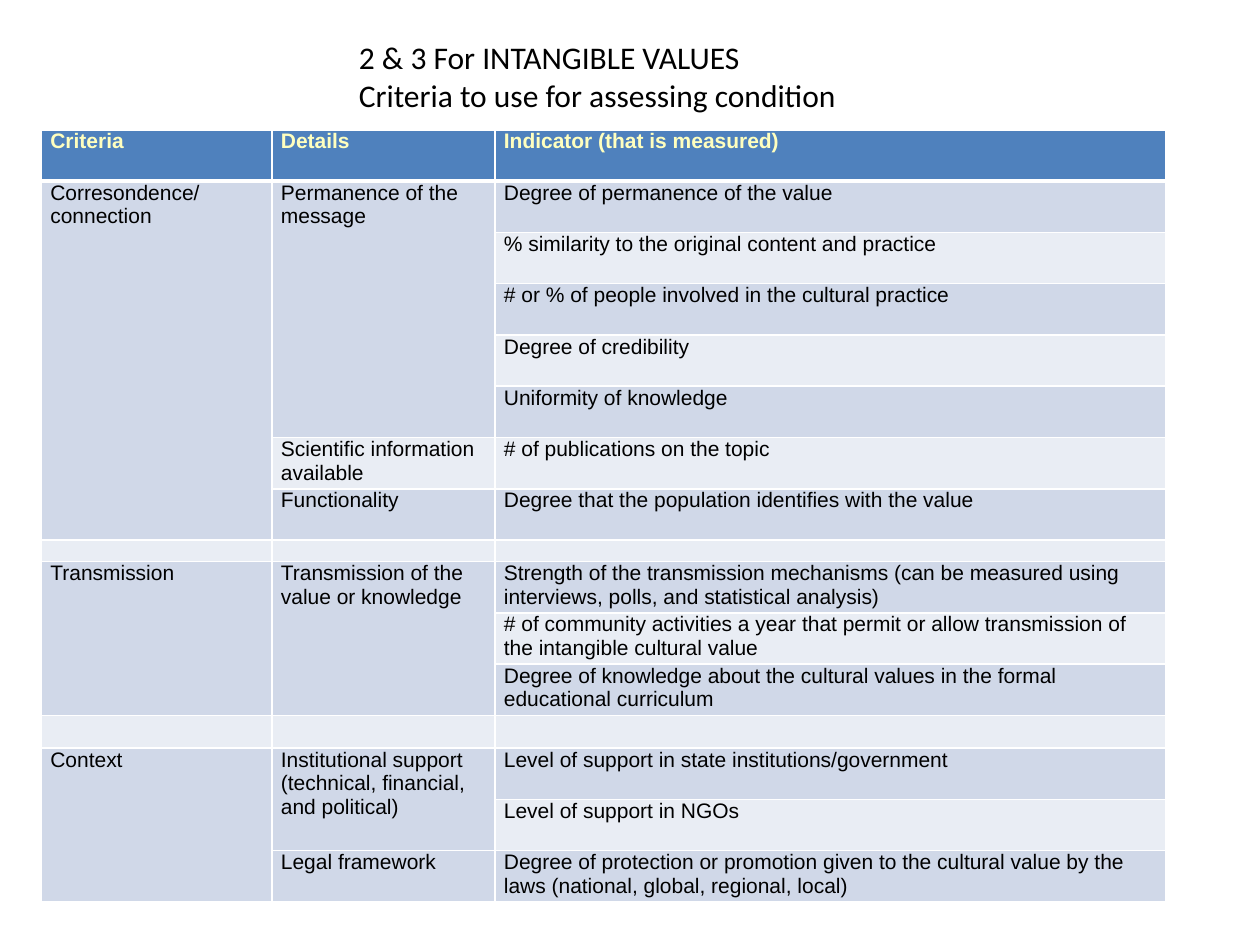
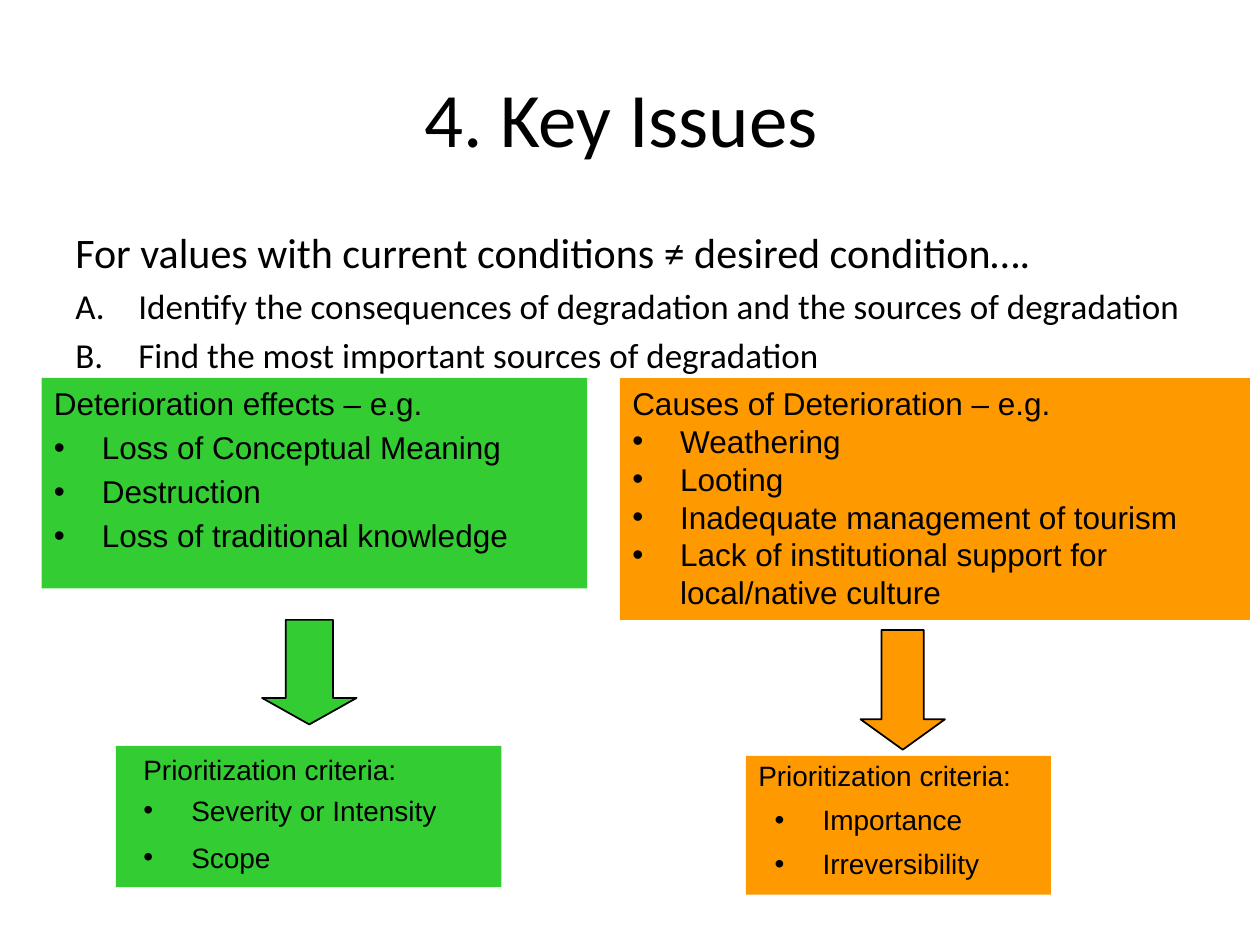
from dataclasses import dataclass
from lxml.etree import SubElement
from pptx import Presentation
from pptx.dml.color import RGBColor as Rgb
from pptx.enum.shapes import MSO_SHAPE as Shape
from pptx.enum.text import MSO_ANCHOR as Anchor, PP_ALIGN as Align
from pptx.oxml.ns import qn
from pptx.util import Inches, Pt


@dataclass(frozen=True)
class Theme:
    page: str = "FFFFFF"
    ink: str = "000000"
    cream: str = "FFFFBF"
    head: str = "4F81BD"
    bands: tuple = ("E9EDF4", "D0D8E8")
    green: str = "33CC33"
    orange: str = "FF9900"
    sans: str = "Calibri"
    plain: str = "Arial"
    title: int = 44
    lead: int = 24
    step: int = 20
    label: int = 18
    note: int = 16
    cell: int = 12
    blank: int = 8


@dataclass(frozen=True)
class Para:
    text: str
    size: int
    left: float = 0
    hang: float = 0
    mark: str = ""
    gap: float = 0
    line: float = 1


T = Theme()
DOT = "•"

HEADS = ("Criteria", "Details", "Indicator (that is measured)")
GROUPS = (
    ("Corresondence/ connection", (
        ("Permanence of the message", (
            "Degree of permanence of the value",
            "% similarity to the original content and practice",
            "# or % of people involved in the cultural practice",
            "Degree of credibility",
            "Uniformity of knowledge")),
        ("Scientific information available", ("# of publications on the topic",)),
        ("Functionality", ("Degree that the population identifies with the value",)))),
    ("Transmission", (
        ("Transmission of the value or knowledge", (
            "Strength of the transmission mechanisms (can be measured using "
            "interviews, polls, and statistical analysis)",
            "# of community activities a year that permit or allow transmission "
            "of the intangible cultural value",
            "Degree of knowledge about the cultural values in the formal "
            "educational curriculum")),)),
    ("Context", (
        ("Institutional support (technical, financial, and political)", (
            "Level of support in state institutions/government",
            "Level of support in NGOs")),
        ("Legal framework", (
            "Degree of protection or promotion given to the cultural value by "
            "the laws (national, global, regional, local)",)))),
)


def box_of(*sides):
    return [Inches(side) for side in sides]


def style(para, face, size, color=T.ink, bold=False):
    for run in para.runs:
        run.font.name = face
        run.font.size = Pt(size)
        run.font.bold = bold
        run.font.color.rgb = Rgb.from_string(color)


def indent(para, item):
    props = para._p.get_or_add_pPr()
    props.set("marL", str(Inches(item.left)))
    props.set("indent", str(Inches(-item.hang)))
    if item.mark == DOT:
        SubElement(props, qn("a:buFont"), typeface=T.plain)
        SubElement(props, qn("a:buChar"), char=DOT)
    elif item.mark:
        SubElement(props, qn("a:buAutoNum"), type=item.mark)
    else:
        SubElement(props, qn("a:buNone"))


def write(frame, items, face, align=Align.LEFT, anchor=Anchor.TOP, wrap=True):
    frame.word_wrap = wrap
    frame.vertical_anchor = anchor
    frame.text = "\n".join(item.text for item in items)
    for para, item in zip(frame.paragraphs, items):
        para.alignment = align
        para.line_spacing = item.line
        para.space_before = Pt(item.size * item.gap)
        indent(para, item)
        style(para, face, item.size)


def add_text(slide, place, items, **look):
    write(slide.shapes.add_textbox(*box_of(*place)).text_frame, items, T.sans, **look)


def add_form(slide, kind, place, color):
    form = slide.shapes.add_shape(kind, *box_of(*place))
    form.shadow.inherit = False
    form.fill.solid()
    form.fill.fore_color.rgb = Rgb.from_string(color)
    form.line.fill.background()
    return form


def add_panel(slide, place, color, items):
    write(add_form(slide, Shape.RECTANGLE, place, color).text_frame, items, T.plain)


def add_arrow(slide, place, color, tip):
    arrow = add_form(slide, Shape.DOWN_ARROW, place, color)
    arrow.adjustments[0] = 0.5
    arrow.adjustments[1] = tip
    arrow.line.color.rgb = Rgb.from_string(T.ink)
    arrow.line.width = Pt(1)


def border(cell, row):
    thick = {"T": 3 if row == 1 else 1, "B": 3 if row == 0 else 1}
    props = cell._tc.get_or_add_tcPr()
    for side in "LRTB":
        line = SubElement(props, qn(f"a:ln{side}"), w=str(Pt(thick.get(side, 1))))
        SubElement(SubElement(line, qn("a:solidFill")), qn("a:srgbClr"), val=T.page)


def dress(cell, row):
    border(cell, row)
    cell.fill.solid()
    cell.fill.fore_color.rgb = Rgb.from_string(T.bands[row % 2] if row else T.head)
    cell.margin_left = cell.margin_right = Inches(0.07)
    cell.margin_top = cell.margin_bottom = 0
    para = cell.text_frame.paragraphs[0]
    if para.runs:
        style(para, T.plain, T.cell, T.ink if row else T.cream, not row)
    else:
        SubElement(para._p, qn("a:endParaRPr"), sz=str(T.blank * 100))


def put(grid, row, col, text, span=1):
    cell = grid.cell(row, col)
    if span > 1:
        cell.merge(grid.cell(row + span - 1, col))
    cell.text = text


def add_grid(slide):
    wide, high = 8.92, 6.13
    gaps = {8: 0.17, 12: 0.26}
    count = 16
    frame = slide.shapes.add_table(count, 3, *box_of(0.33, 1.03, wide, high))
    grid = frame.table
    for col, width in zip(grid.columns, (1.83, 1.77, 5.32)):
        col.width = Inches(width)
    tall = (high - sum(gaps.values())) / (count - len(gaps))
    for row, line in enumerate(grid.rows):
        line.height = Inches(gaps.get(row, tall))
    for col, head in enumerate(HEADS):
        put(grid, 0, col, head)
    row = 1
    for name, parts in GROUPS:
        put(grid, row, 0, name, sum(len(signs) for _, signs in parts))
        for part, signs in parts:
            put(grid, row, 1, part, len(signs))
            for sign in signs:
                put(grid, row, 2, sign)
                row += 1
        row += 1
    for row in range(count):
        for col in range(3):
            dress(grid.cell(row, col), row)


def add_slide(deck):
    slide = deck.slides.add_slide(deck.slide_layouts[6])
    slide.background.fill.solid()
    slide.background.fill.fore_color.rgb = Rgb.from_string(T.page)
    return slide


def values(deck):
    slide = add_slide(deck)
    add_grid(slide)
    lines = ("2 & 3 For INTANGIBLE VALUES", "Criteria to use for assessing condition")
    add_text(slide, (2.75, 0.25, 4.03, 0.71),
             [Para(line, T.label) for line in lines], wrap=False)


def listing(head, points, **look):
    return [head] + [Para(point, head.size, mark=DOT, **look) for point in points]


def issues(deck):
    slide = add_slide(deck)
    add_text(slide, (0.5, 0.3, 9, 1.25), [Para("4. Key Issues ", T.title)],
             align=Align.CENTER, anchor=Anchor.MIDDLE)
    lead = Para("For values with current conditions ≠ desired condition….",
                T.lead, 0.38, 0.38, gap=0.2)
    steps = ("Identify the consequences of degradation and the sources of degradation",
             "Find the most important sources of degradation")
    add_text(slide, (0.5, 1.75, 9, 4.95), [lead] + [
        Para(step, T.step, 0.5, 0.5, "alphaUcPeriod", 0.2) for step in steps])

    add_panel(slide, (0.33, 3, 4.33, 1.67), T.green, listing(
        Para("Deterioration effects – e.g.", T.label, 0.38, 0.38, gap=0.2),
        ("Loss of Conceptual Meaning", "Destruction", "Loss of traditional knowledge"),
        left=0.38, hang=0.38, gap=0.2))
    add_panel(slide, (4.92, 3, 5, 1.92), T.orange, listing(
        Para("Causes of Deterioration – e.g.", T.label, 0.38, 0.38),
        ("Weathering", "Looting", "Inadequate management of tourism",
         "Lack of institutional support for local/native culture"),
        left=0.38, hang=0.38))

    add_arrow(slide, (2.08, 4.92, 0.75, 0.83), T.green, 0.28)
    add_arrow(slide, (6.83, 5, 0.67, 0.95), T.orange, 0.36)

    ranks = "Prioritization criteria:"
    add_panel(slide, (0.92, 5.92, 3.06, 1.12), T.green, [
        Para(ranks, T.note, 0.5, 0.38),
        Para("Severity or Intensity", T.note, 0.5, 0.38, DOT, 0.5, 0.8),
        Para("Scope", T.note, 0.5, 0.38, DOT, 0.5)])
    add_panel(slide, (5.92, 6, 2.42, 1.1), T.orange, listing(
        Para(ranks, T.note, line=0.9), ("Importance", "Irreversibility"),
        left=0.51, hang=0.38, gap=0.5, line=0.9))


def main():
    deck = Presentation()
    deck.slide_width, deck.slide_height = box_of(10, 7.5)
    values(deck)
    issues(deck)
    deck.save("out.pptx")


if __name__ == "__main__":
    main()
